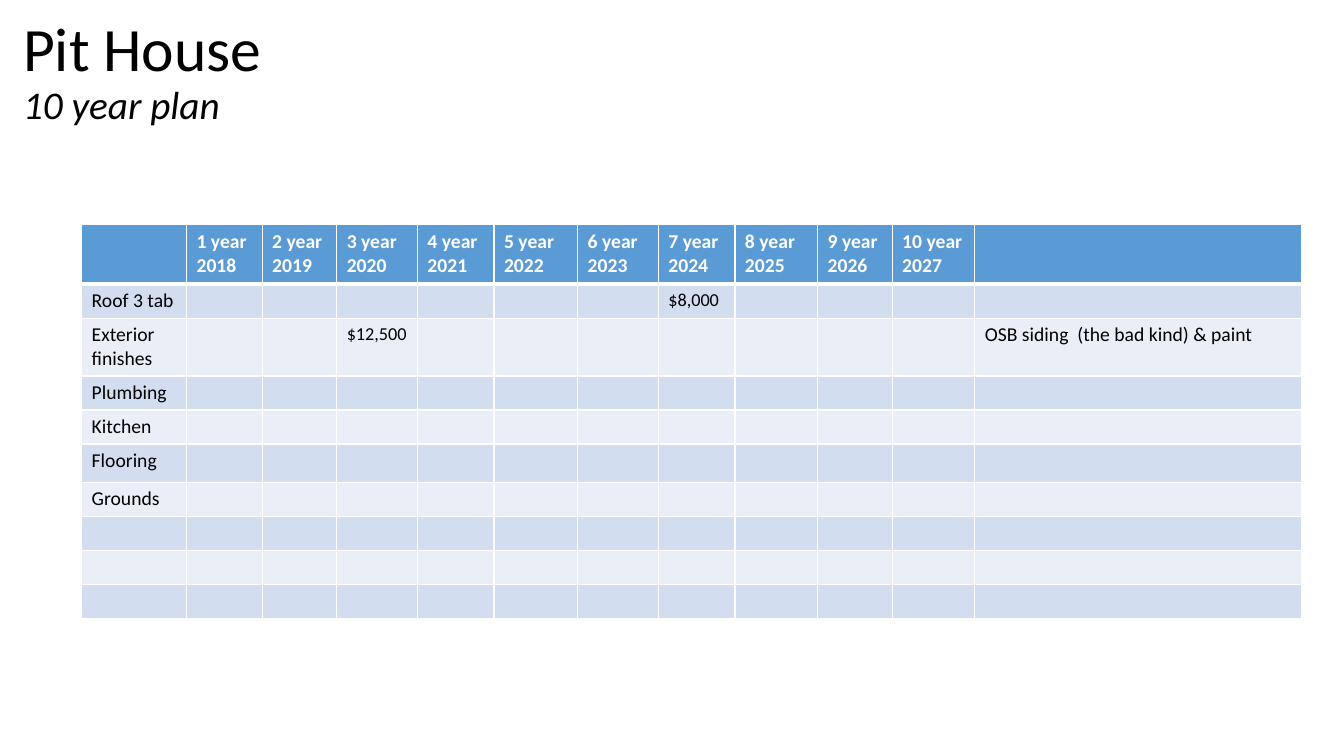
import lxml.etree
import pptx
import pptx.dml.color
import pptx.enum.text
import pptx.oxml.ns
import pptx.util

Inches = pptx.util.Inches
Pt = pptx.util.Pt
RGBColor = pptx.dml.color.RGBColor
qn = pptx.oxml.ns.qn

FONT = "Calibri"
WHITE = RGBColor(0xFF, 0xFF, 0xFF)
BLACK = RGBColor(0x00, 0x00, 0x00)
HEADER_BLUE = RGBColor(0x5B, 0x9B, 0xD5)
BANDS = (RGBColor(0xD2, 0xDE, 0xEF), RGBColor(0xEA, 0xEF, 0xF7))

FIRST_YEAR = 2018
PLAN_YEARS = 10
TEXT_SIZE = 14
COST_SIZE = 13
ITEMS = ["Roof 3 tab", "Exterior finishes", "Plumbing", "Kitchen", "Flooring",
         "Grounds", "", "", ""]
COSTS = {("Roof 3 tab", 2024): "$8,000", ("Exterior finishes", 2020): "$12,500"}
REMARKS = {"Exterior finishes": "OSB siding  (the bad kind) & paint"}

COLUMN_WIDTHS = [1.04, 0.75, 0.74, 0.8, 0.76, 0.83, 0.8, 0.76, 0.82, 0.74, 0.82, 3.24]
HEADER_HEIGHT = 0.59
ITEM_HEIGHT = 0.29
ITEM_HEIGHTS = {"Flooring": 0.38}


def add_run(paragraph, text, size, color=BLACK, bold=False, italic=False):
    run = paragraph.add_run()
    run.text = text
    run.font.name = FONT
    run.font.size = Pt(size)
    run.font.color.rgb = color
    run.font.bold = bold
    run.font.italic = italic


def add_title(slide, left, top, width, height):
    title = slide.shapes.title
    title.left, title.top = Inches(left), Inches(top)
    title.width, title.height = Inches(width), Inches(height)
    frame = title.text_frame
    frame.word_wrap = True
    frame.auto_size = pptx.enum.text.MSO_AUTO_SIZE.NONE
    frame.vertical_anchor = pptx.enum.text.MSO_ANCHOR.MIDDLE
    heading = frame.paragraphs[0]
    heading.alignment = pptx.enum.text.PP_ALIGN.LEFT
    heading.line_spacing = 0.9
    add_run(heading, "Pit House", 44)
    heading.add_line_break()
    add_run(heading, "10 year plan", 28, italic=True)


def set_borders(cell, top=1, bottom=1):
    properties = cell._tc.get_or_add_tcPr()
    for side, points in (("L", 1), ("R", 1), ("T", top), ("B", bottom)):
        line = lxml.etree.SubElement(properties, qn(f"a:ln{side}"), w=str(Pt(points)))
        fill = lxml.etree.SubElement(line, qn("a:solidFill"))
        lxml.etree.SubElement(fill, qn("a:srgbClr"), val=str(WHITE))


def fill_cell(cell, lines, fill, size=TEXT_SIZE, color=BLACK, bold=False):
    """Writes one paragraph per line; an empty cell keeps the text size for its row height."""
    cell.fill.solid()
    cell.fill.fore_color.rgb = fill
    frame = cell.text_frame
    for index, line in enumerate(lines):
        paragraph = frame.add_paragraph() if index else frame.paragraphs[0]
        add_run(paragraph, line, size, color, bold)
    if not lines:
        lxml.etree.SubElement(frame.paragraphs[0]._p, qn("a:endParaRPr"),
                              sz=str(size * 100))


def add_plan_table(slide, left, top, width, height):
    plan = slide.shapes.add_table(len(ITEMS) + 1, len(COLUMN_WIDTHS), Inches(left),
                                  Inches(top), Inches(width), Inches(height)).table
    plan.horz_banding = False
    for column, column_width in zip(plan.columns, COLUMN_WIDTHS):
        column.width = Inches(column_width)

    plan.rows[0].height = Inches(HEADER_HEIGHT)
    for number, cell in enumerate(plan.rows[0].cells):
        is_year = 1 <= number <= PLAN_YEARS
        lines = [f"{number} year", str(FIRST_YEAR + number - 1)] if is_year else []
        set_borders(cell, bottom=3)
        fill_cell(cell, lines, HEADER_BLUE, color=WHITE, bold=True)

    for index, item in enumerate(ITEMS):
        row = plan.rows[index + 1]
        row.height = Inches(ITEM_HEIGHTS.get(item, ITEM_HEIGHT))
        costs = [COSTS.get((item, FIRST_YEAR + year), "") for year in range(PLAN_YEARS)]
        texts = [item, *costs, REMARKS.get(item, "")]
        for cell, text in zip(row.cells, texts):
            size = COST_SIZE if text and text in costs else TEXT_SIZE
            set_borders(cell, top=1 if index else 3)
            fill_cell(cell, [text] if text else [], BANDS[index % 2], size)


def main():
    presentation = pptx.Presentation()
    presentation.slide_width = Inches(13.33)
    presentation.slide_height = Inches(7.5)
    slide = presentation.slides.add_slide(presentation.slide_layouts[5])
    add_title(slide, 0.13, 0, 11.5, 1.45)
    add_plan_table(slide, 0.81, 2.23, 12.11, 3.87)
    presentation.save("out.pptx")


if __name__ == "__main__":
    main()
